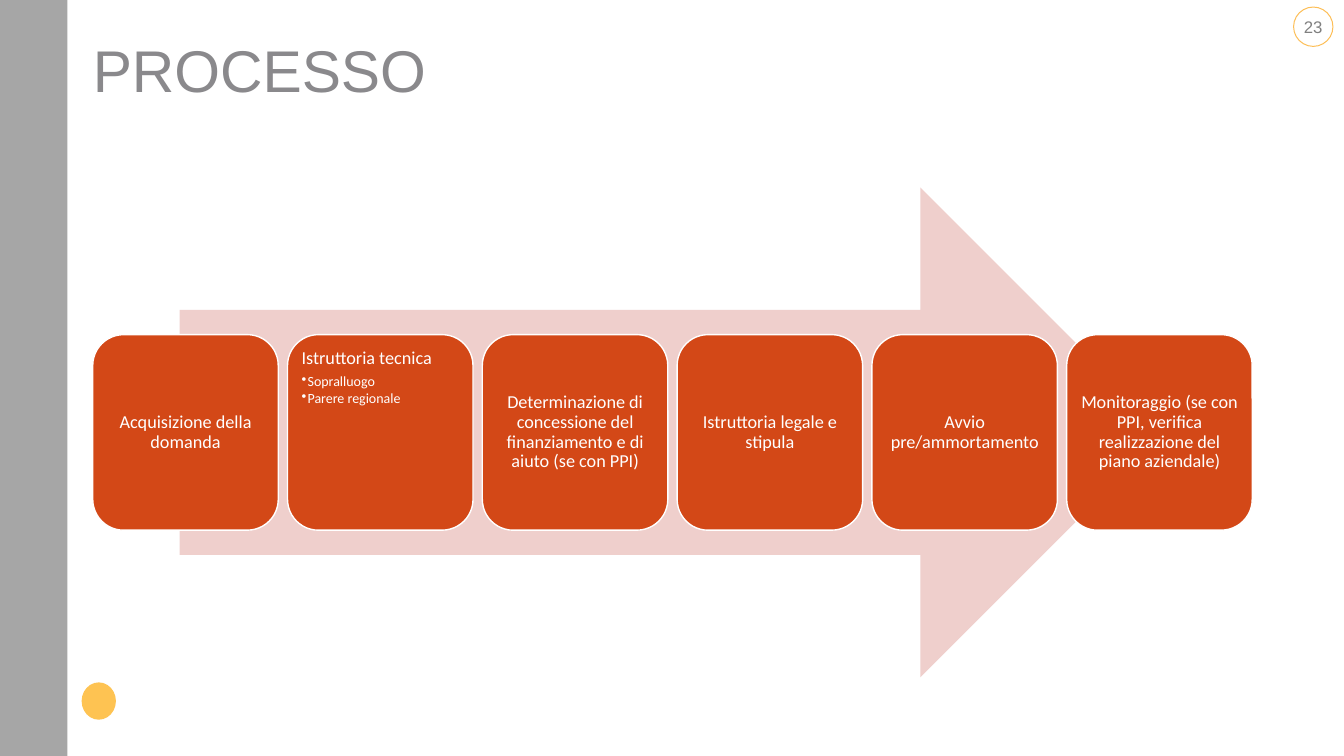
from lxml.etree import SubElement
from pptx import Presentation
from pptx.dml.color import RGBColor
from pptx.enum.shapes import MSO_SHAPE
from pptx.enum.text import MSO_ANCHOR, MSO_AUTO_SIZE, PP_ALIGN
from pptx.oxml.ns import qn
from pptx.util import Inches, Pt

SIDEBAR_GREY = RGBColor(0xA6, 0xA6, 0xA6)
TITLE_GREY = RGBColor(0x8A, 0x89, 0x8C)
NUMBER_GREY = RGBColor(0x80, 0x80, 0x80)
EMBLEM_YELLOW = RGBColor(0xFE, 0xC3, 0x52)
RING_YELLOW = RGBColor(0xFD, 0xBE, 0x56)
ARROW_PINK = RGBColor(0xEF, 0xCF, 0xCC)
STEP_ORANGE = RGBColor(0xD3, 0x48, 0x17)
WHITE = RGBColor(0xFF, 0xFF, 0xFF)

# Step row: six equal columns inside the content area (inches)
LEFT, CONTENT_WIDTH = 0.92, 11.5
STEP_TOP, STEP_WIDTH, STEP_HEIGHT = 3.32, 1.84, 1.94

STEPS = [
    ("Acquisizione della domanda", []),
    ("Istruttoria tecnica", ["Sopralluogo", "Parere regionale"]),
    ("Determinazione di concessione del finanziamento e di aiuto (se con PPI)", []),
    ("Istruttoria legale e stipula", []),
    ("Avvio pre/ammortamento", []),
    ("Monitoraggio (se con PPI, verifica realizzazione del piano aziendale)", []),
]


def add_block(slide, preset, left, top, width, height, fill=None, line=None, line_width=1):
    block = slide.shapes.add_shape(
        preset, Inches(left), Inches(top), Inches(width), Inches(height))
    block.shadow.inherit = False
    if fill is None:
        block.fill.background()
    else:
        block.fill.solid()
        block.fill.fore_color.rgb = fill
    if line is None:
        block.line.fill.background()
    else:
        block.line.color.rgb = line
        block.line.width = Pt(line_width)
    return block


def set_frame(frame, anchor, inset=0):
    frame.word_wrap = True
    frame.auto_size = MSO_AUTO_SIZE.NONE
    frame.vertical_anchor = anchor
    frame.margin_left = frame.margin_right = Inches(inset)
    frame.margin_top = frame.margin_bottom = Inches(inset)


def write(paragraph, text, size, color, font="Calibri", align=PP_ALIGN.LEFT,
          spacing=0.9, after=0):
    paragraph.text = text
    paragraph.alignment = align
    paragraph.line_spacing = spacing
    paragraph.space_after = Pt(after)
    paragraph.font.size = Pt(size)
    paragraph.font.name = font
    paragraph.font.color.rgb = color


def add_bullet(paragraph):
    properties = paragraph._p.get_or_add_pPr()
    properties.set("marL", str(Inches(0.06)))
    properties.set("indent", str(Inches(-0.06)))
    SubElement(properties, qn("a:buChar")).set("char", "•")


def add_step(slide, left, heading, details):
    step = add_block(slide, MSO_SHAPE.ROUNDED_RECTANGLE, left, STEP_TOP,
                     STEP_WIDTH, STEP_HEIGHT, STEP_ORANGE, WHITE)
    frame = step.text_frame
    set_frame(frame, MSO_ANCHOR.TOP if details else MSO_ANCHOR.MIDDLE, 0.05)
    write(frame.paragraphs[0], heading, 13, WHITE,
          align=PP_ALIGN.LEFT if details else PP_ALIGN.CENTER,
          after=4.5 if details else 0)
    for detail in details:
        paragraph = frame.add_paragraph()
        paragraph.level = 1
        add_bullet(paragraph)
        write(paragraph, detail, 10, WHITE, after=1.5)


def add_title(slide, text):
    title = slide.shapes.title
    title.left, title.top = Inches(LEFT), Inches(0.4)
    title.width, title.height = Inches(CONTENT_WIDTH), Inches(0.65)
    set_frame(title.text_frame, MSO_ANCHOR.TOP)
    title.text_frame.margin_top = Inches(0.01)
    write(title.text_frame.paragraphs[0], text, 42, TITLE_GREY, "Arial")


def add_page_number(slide, number):
    ring = add_block(slide, MSO_SHAPE.OVAL, 12.83, 0.07, 0.39, 0.39,
                     line=RING_YELLOW, line_width=0.7)
    set_frame(ring.text_frame, MSO_ANCHOR.MIDDLE)
    ring.text_frame.word_wrap = False
    write(ring.text_frame.paragraphs[0], number, 12, NUMBER_GREY, "Arial",
          PP_ALIGN.CENTER, spacing=1.0)


def main():
    deck = Presentation()
    deck.slide_width, deck.slide_height = Inches(13.33), Inches(7.5)
    slide = deck.slides.add_slide(deck.slide_layouts[5])

    # Page frame: sidebar, emblem, page number, title
    add_block(slide, MSO_SHAPE.RECTANGLE, 0, 0, 0.67, 7.5, SIDEBAR_GREY)
    add_block(slide, MSO_SHAPE.OVAL, 0.81, 6.77, 0.34, 0.37, EMBLEM_YELLOW)
    add_page_number(slide, "23")
    add_title(slide, "PROCESSO")

    # Process arrow, 85% of the content width and centred on it
    arrow_width = 0.85 * CONTENT_WIDTH
    add_block(slide, MSO_SHAPE.RIGHT_ARROW, LEFT + (CONTENT_WIDTH - arrow_width) / 2,
              1.86, arrow_width, 4.86, ARROW_PINK)

    # Steps
    pitch = (CONTENT_WIDTH - STEP_WIDTH) / (len(STEPS) - 1)
    for column, (heading, details) in enumerate(STEPS):
        add_step(slide, LEFT + column * pitch, heading, details)

    deck.save("out.pptx")


if __name__ == "__main__":
    main()
